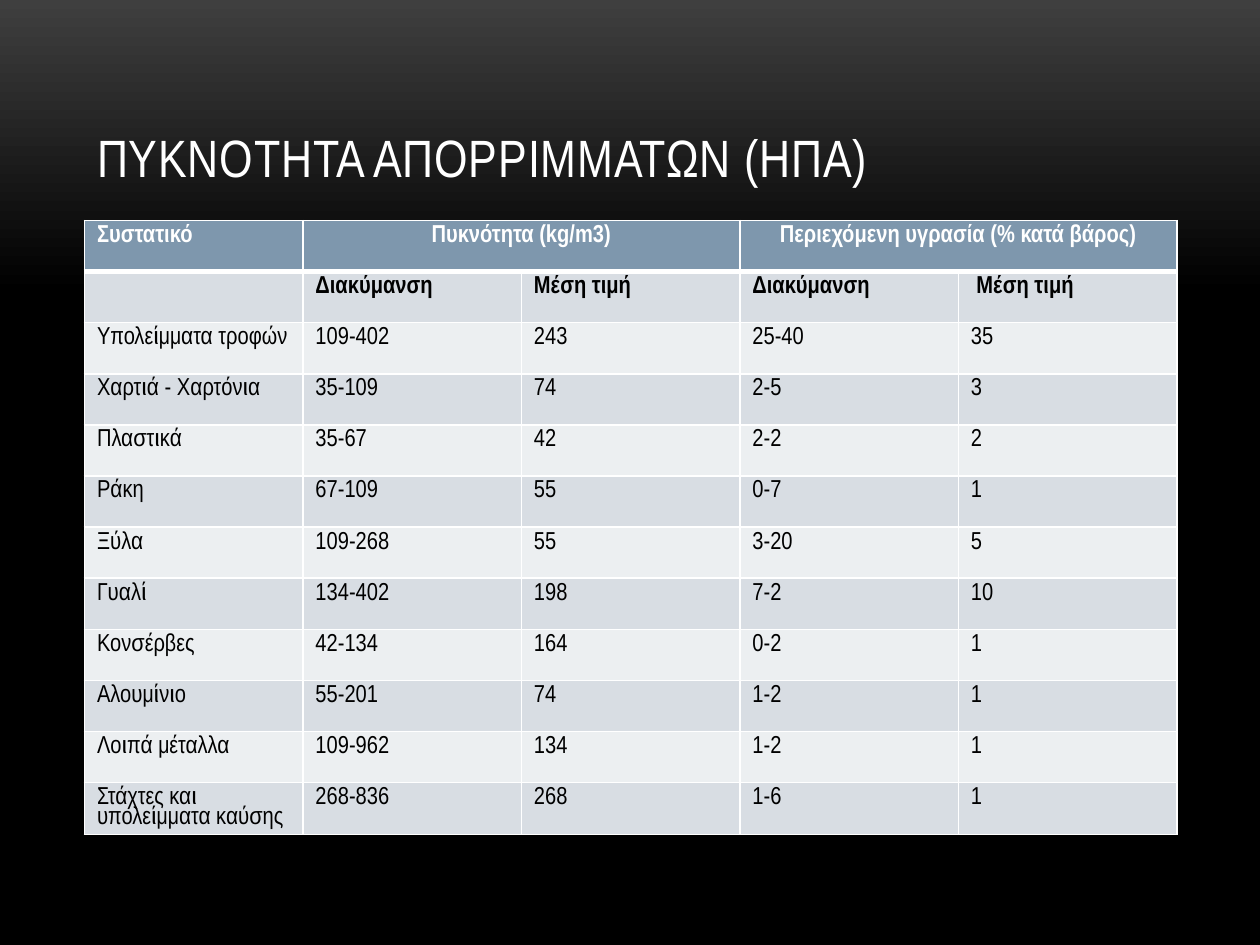
from lxml.etree import SubElement
from pptx import Presentation
from pptx.dml.color import RGBColor
from pptx.enum.text import MSO_ANCHOR, MSO_AUTO_SIZE, PP_ALIGN
from pptx.oxml.ns import qn
from pptx.util import Inches, Pt

COLORS = {
    "white": "FFFFFF", "black": "000000", "glow": "3F3F3F",
    "header": "7E97AD", "dark_band": "D8DDE3", "light_band": "ECEFF1",
}
HEADINGS = ["Συστατικό", "Πυκνότητα (kg/m3)", "", "Περιεχόμενη υγρασία (% κατά βάρος)", ""]
SUBHEADINGS = ["", "Διακύμανση", "Μέση τιμή", "Διακύμανση", " Μέση τιμή"]
COMPONENTS = [
    ["Υπολείμματα τροφών", "109-402", "243", "25-40", "35"],
    ["Χαρτιά - Χαρτόνια", "35-109", "74", "2-5", "3"],
    ["Πλαστικά", "35-67", "42", "2-2", "2"],
    ["Ράκη", "67-109", "55", "0-7", "1"],
    ["Ξύλα", "109-268", "55", "3-20", "5"],
    ["Γυαλί", "134-402", "198", "7-2", "10"],
    ["Κονσέρβες", "42-134", "164", "0-2", "1"],
    ["Αλουμίνιο", "55-201", "74", "1-2", "1"],
    ["Λοιπά μέταλλα", "109-962", "134", "1-2", "1"],
    ["Στάχτες και υπολείμματα καύσης", "268-836", "268", "1-6", "1"],
]
MERGED_STARTS = (1, 3)


def rgb(name):
    return RGBColor.from_string(COLORS[name])


def set_all(target, values):
    for name, value in values.items():
        setattr(target, name, value)


class SlideBuilder:
    font_name = "Arial Narrow"

    def __init__(self, deck):
        self.slide = deck.slides.add_slide(deck.slide_layouts[5])

    def background(self):
        fill = self.slide.background.fill
        fill.gradient()
        fill.gradient_angle = 270
        for stop, position, color in zip(fill.gradient_stops, (0, 0.31), ("glow", "black")):
            stop.position = position
            stop.color.rgb = rgb(color)

    def style(self, paragraph, size, color, bold=False, align=PP_ALIGN.LEFT, spacing=0.9):
        set_all(paragraph, {"alignment": align, "line_spacing": spacing})
        set_all(paragraph.font, {"name": self.font_name, "size": Pt(size), "bold": bold})
        paragraph.font.color.rgb = rgb(color)

    def title(self, text):
        box = self.slide.shapes.title
        set_all(box, {"left": Inches(0.67), "top": Inches(0.3),
                      "width": Inches(8.67), "height": Inches(1.25)})
        frame = box.text_frame
        set_all(frame, {"text": text, "word_wrap": True, "auto_size": MSO_AUTO_SIZE.NONE,
                        "vertical_anchor": MSO_ANCHOR.BOTTOM})
        paragraph = frame.paragraphs[0]
        self.style(paragraph, 30, "white")
        paragraph.runs[0].font._element.set("spc", "50")

    def borders(self, cell, top, bottom):
        properties = cell._tc.get_or_add_tcPr()
        for side, width in {"lnL": 1, "lnR": 1, "lnT": top, "lnB": bottom}.items():
            line = SubElement(properties, qn(f"a:{side}"), w=str(Pt(width)))
            fill = SubElement(line, qn("a:solidFill"))
            SubElement(fill, qn("a:srgbClr"), val=COLORS["white"])

    def table(self, rows):
        frame = self.slide.shapes.add_table(
            len(rows), len(rows[0]), Inches(0.67), Inches(1.75), Inches(8.67), Inches(4.87))
        table = frame.table
        for row_index, row in enumerate(rows):
            is_header = row_index == 0
            band = "header" if is_header else "dark_band" if row_index % 2 else "light_band"
            for column, text in enumerate(row):
                cell = table.cell(row_index, column)
                cell.text = text
                centered = is_header and column in MERGED_STARTS
                self.style(cell.text_frame.paragraphs[0], 14,
                           "white" if is_header else "black", bold=row_index < 2,
                           align=PP_ALIGN.CENTER if centered else PP_ALIGN.LEFT, spacing=0.85)
                self.borders(cell, top=3 if row_index == 1 else 1, bottom=3 if is_header else 1)
                cell.fill.solid()
                cell.fill.fore_color.rgb = rgb(band)
        for column in MERGED_STARTS:
            table.cell(0, column).merge(table.cell(0, column + 1))


def main():
    deck = Presentation()
    set_all(deck, {"slide_width": Inches(10), "slide_height": Inches(7.5)})
    builder = SlideBuilder(deck)
    builder.background()
    builder.title("ΠΥΚΝΟΤΗΤΑ ΑΠΟΡΡΙΜΜΑΤΩΝ (ΗΠΑ)")
    builder.table([HEADINGS, SUBHEADINGS, *COMPONENTS])
    deck.save("out.pptx")


if __name__ == "__main__":
    main()
